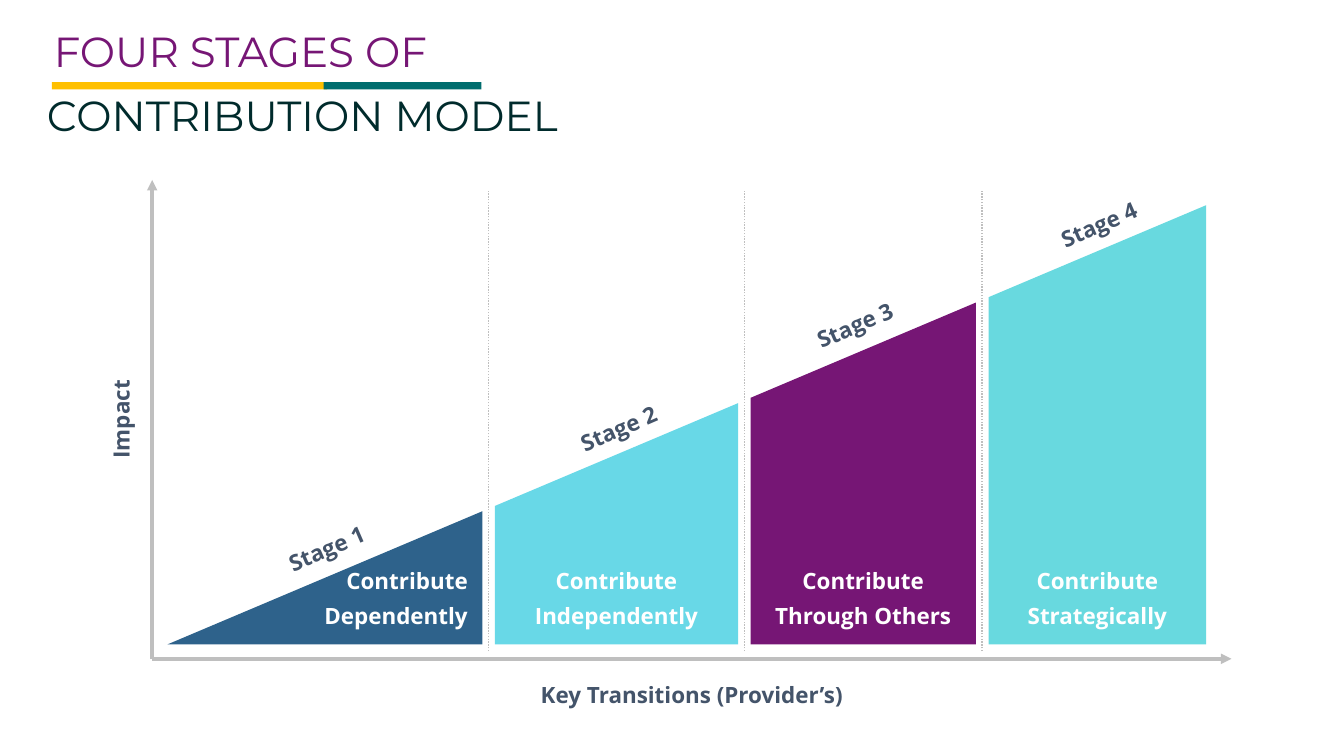
from lxml import etree
from pptx import Presentation
from pptx import util as u
from pptx.dml.color import RGBColor
from pptx.enum import dml, shapes, text
from pptx.oxml import ns

Cm = u.Cm
PURPLE = RGBColor(0x76, 0x16, 0x75)
NAVY = RGBColor(0x2E, 0x62, 0x8B)
SKY = RGBColor(0x68, 0xD8, 0xE7)
AQUA = RGBColor(0x68, 0xD9, 0xDF)
GOLD = RGBColor(0xFF, 0xC0, 0x00)
TEAL = RGBColor(0x00, 0x6D, 0x6E)
DARK = RGBColor(0x00, 0x2B, 0x2C)
SLATE = RGBColor(0x44, 0x54, 0x6A)
GREY = RGBColor(0xBF, 0xBF, 0xBF)
WHITE = RGBColor(0xFF, 0xFF, 0xFF)

TITLES = [
    ("FOUR STAGES OF", PURPLE, 2.46, 1.17, 20.45),
    ("CONTRIBUTION MODEL", DARK, 2.11, 4.37, 27.38),
]
TITLE_BARS = [(GOLD, 2.62, 13.87), (TEAL, 16.31, 7.95)]
STAGES = [
    dict(name="Stage 1", lines=["Contribute", "Dependently"], color=NAVY,
         left=8.43, right=24.31, label=(16.37, 27.46), width=7.8),
    dict(name="Stage 2", lines=["Contribute", "Independently"], color=SKY,
         left=24.94, right=37.19, label=(31.08, 21.41), width=8.81),
    dict(name="Stage 3", lines=["Contribute", "Through Others"], color=PURPLE,
         left=37.82, right=49.17, label=(42.99, 16.18), width=9.47),
    dict(name="Stage 4", lines=["Contribute", "Strategically"], color=AQUA,
         left=49.81, right=60.78, label=(55.28, 11.13), width=7.59),
]
AXIS_LABELS = [
    ("Key Transitions (Provider’s)", 34.86, 34.8, 16.28, 0),
    ("Impact", 5.88, 21.13, 4.5, 270),
]
BASE, PEAK = 32.48, 10.34
ORIGIN = (7.67, 33.2)
AXIS_ENDS = [(7.67, 9.07), (62.05, 33.2)]
DIVIDER_TOP, DIVIDER_BOTTOM = 9.6, 32.82
LABEL_WIDTH, LABEL_HEIGHT, LABEL_ANGLE = 4.6, 1.88, 336.5
CAPTION_TOP, CAPTION_HEIGHT = 28.14, 3.66
CAPTION_RIGHT = 23.83
SLOPE = (BASE - PEAK) / (STAGES[-1]["right"] - STAGES[0]["left"])


def slope_y(x):
    return BASE - SLOPE * (x - STAGES[0]["left"])


def add_text(s, lines, left, top, width, height, color, font="Open Sans", size=32,
             bold=True, align=text.PP_ALIGN.CENTER, anchor=text.MSO_ANCHOR.MIDDLE,
             spacing=u.Pt(50)):
    box = s.shapes.add_textbox(Cm(left), Cm(top), Cm(width), Cm(height))
    tf = box.text_frame
    tf.word_wrap = False
    tf.vertical_anchor = anchor
    for i, line in enumerate(lines):
        p = tf.add_paragraph() if i else tf.paragraphs[0]
        p.alignment = align
        p.line_spacing = spacing
        r = p.add_run()
        r.text = line
        r.font.name = font
        r.font.size = u.Pt(size)
        r.font.bold = bold
        r.font.color.rgb = color
    return box


def add_label(s, label, x, y, width, angle):
    box = add_text(s, [label], x - width / 2, y - LABEL_HEIGHT / 2, width, LABEL_HEIGHT, SLATE)
    box.rotation = angle


def paint(sp, color):
    sp.shadow.inherit = False
    sp.fill.solid()
    sp.fill.fore_color.rgb = color
    sp.line.fill.background()


def add_line(s, start, end, width):
    line = s.shapes.add_connector(shapes.MSO_CONNECTOR.STRAIGHT, *map(Cm, start + end))
    line.line.color.rgb = GREY
    line.line.width = u.Pt(width)
    etree.SubElement(line._element.spPr, ns.qn("a:effectLst"))
    return line


def add_stage(s, stage):
    left, right = stage["left"], stage["right"]
    outline = [(right, slope_y(right)), (right, BASE), (left, BASE), (left, slope_y(left))]
    points = [(Cm(x), Cm(y)) for x, y in outline]
    builder = s.shapes.build_freeform(*points[0])
    builder.add_line_segments(points[1:], close=True)
    paint(builder.convert_to_shape(), stage["color"])


def add_caption(s, stage, first):
    width = stage["width"]
    if first:
        left, align = CAPTION_RIGHT - width, text.PP_ALIGN.RIGHT
    else:
        left, align = (stage["left"] + stage["right"] - width) / 2, text.PP_ALIGN.CENTER
    add_text(s, stage["lines"], left, CAPTION_TOP, width, CAPTION_HEIGHT, WHITE,
             align=align, anchor=text.MSO_ANCHOR.BOTTOM)


def main():
    prs = Presentation()
    prs.slide_width, prs.slide_height = Cm(67.72), Cm(38.1)
    s = prs.slides.add_slide(prs.slide_layouts[6])

    for stage in reversed(STAGES):
        add_stage(s, stage)
    for end in AXIS_ENDS:
        axis = add_line(s, ORIGIN, end, 5)
        etree.SubElement(axis.line._get_or_add_ln(), ns.qn("a:tailEnd"), type="triangle")
    for label in AXIS_LABELS:
        add_label(s, *label)
    for stage in STAGES:
        add_label(s, stage["name"], *stage["label"], LABEL_WIDTH, LABEL_ANGLE)
    for before, after in zip(STAGES, STAGES[1:]):
        x = (before["right"] + after["left"]) / 2
        divider = add_line(s, (x, DIVIDER_BOTTOM), (x, DIVIDER_TOP), 2)
        divider.line.dash_style = dml.MSO_LINE.ROUND_DOT
    for i, stage in enumerate(STAGES):
        add_caption(s, stage, i == 0)
    for title, color, left, top, width in TITLES:
        add_text(s, [title], left, top, width, 2.82, color, font="Montserrat", size=60,
                 bold=False, align=text.PP_ALIGN.LEFT, anchor=text.MSO_ANCHOR.TOP, spacing=None)
    for color, left, width in TITLE_BARS:
        bar = s.shapes.add_shape(shapes.MSO_SHAPE.RECTANGLE, Cm(left), Cm(4.14), Cm(width), Cm(0.36))
        paint(bar, color)

    prs.save("out.pptx")


if __name__ == "__main__":
    main()
